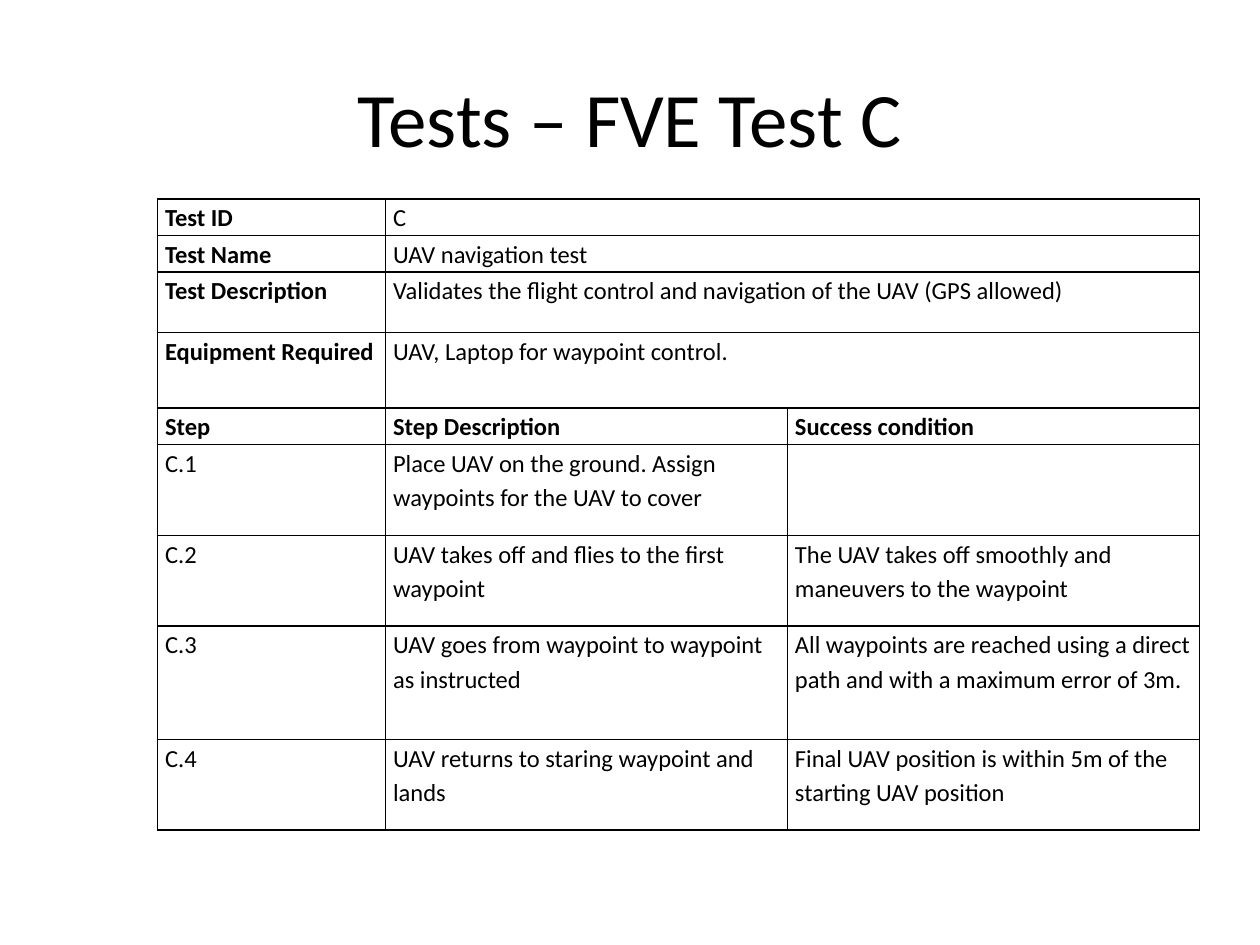
from lxml import etree
from pptx import Presentation, util as u
from pptx.dml.color import RGBColor
from pptx.enum import text
from pptx.oxml.ns import qn

TITLE = "Tests – FVE Test C"
FACTS = [
    ("Test ID", "C"),
    ("Test Name", "UAV navigation test"),
    ("Test Description", "Validates the flight control and navigation of the UAV (GPS allowed)"),
    ("Equipment Required", "UAV, Laptop for waypoint control."),
]
HEAD = ("Step", "Step Description", "Success condition")
STEPS = [
    ("C.1", "Place UAV on the ground. Assign waypoints for the UAV to cover", ""),
    ("C.2", "UAV takes off and flies to the first waypoint",
     "The UAV takes off smoothly and maneuvers to the waypoint"),
    ("C.3", "UAV goes from waypoint to waypoint as instructed",
     "All waypoints are reached using a direct path and with a maximum error of 3m."),
    ("C.4", "UAV returns to staring waypoint and lands",
     "Final UAV position is within 5m of the starting UAV position"),
]
COLS = (1.81, 3.19, 3.27)
LINE, STEP = 0.29, 0.72
ROWS = (LINE, LINE, 0.48, 0.6, LINE, STEP, STEP, 0.9, STEP)
BLACK, WHITE, FONT = "000000", "FFFFFF", "Calibri"


def color(code):
    return RGBColor.from_string(code)


def style(para, size, bold=False):
    font = para.font
    font.name, font.size, font.bold = FONT, u.Pt(size), bold
    font.color.rgb = color(BLACK)


def border(cell):
    props = cell._tc.get_or_add_tcPr()
    for side in "LRTB":
        line = etree.SubElement(props, qn(f"a:ln{side}"), w=str(u.Pt(1)))
        fill = etree.SubElement(line, qn("a:solidFill"))
        etree.SubElement(fill, qn("a:srgbClr"), val=BLACK)


def dress(cell, words, bold):
    border(cell)
    cell.fill.solid()
    cell.fill.fore_color.rgb = color(WHITE)
    cell.margin_left = cell.margin_right = u.Inches(0.06)
    cell.margin_top = cell.margin_bottom = 0
    cell.text = words
    para = cell.text_frame.paragraphs[0]
    para.line_spacing = 1.15
    style(para, 14, bold)


def main():
    deck = Presentation()
    deck.slide_width, deck.slide_height = u.Inches(10), u.Inches(7.5)
    slide = deck.slides.add_slide(deck.slide_layouts[5])

    title = slide.shapes.title
    title.left, title.top, title.width, title.height = map(u.Inches, (0.5, 0.3, 9, 1.25))
    title.text_frame.text = TITLE
    title.text_frame.vertical_anchor = text.MSO_ANCHOR.MIDDLE
    para = title.text_frame.paragraphs[0]
    para.alignment = text.PP_ALIGN.CENTER
    style(para, 44)

    box = map(u.Inches, (1.25, 1.58, sum(COLS), sum(ROWS)))
    table = slide.shapes.add_table(len(ROWS), len(COLS), *box).table
    for col, width in zip(table.columns, COLS):
        col.width = u.Inches(width)
    for row, height in zip(table.rows, ROWS):
        row.height = u.Inches(height)

    data = [(*fact, "") for fact in FACTS] + [HEAD] + STEPS
    for r, row in enumerate(data):
        for c, words in enumerate(row):
            bold = row is HEAD or (r < len(FACTS) and c == 0)
            dress(table.cell(r, c), words, bold)
    for r in range(len(FACTS)):
        table.cell(r, 1).merge(table.cell(r, 2))

    deck.save("out.pptx")


if __name__ == "__main__":
    main()
